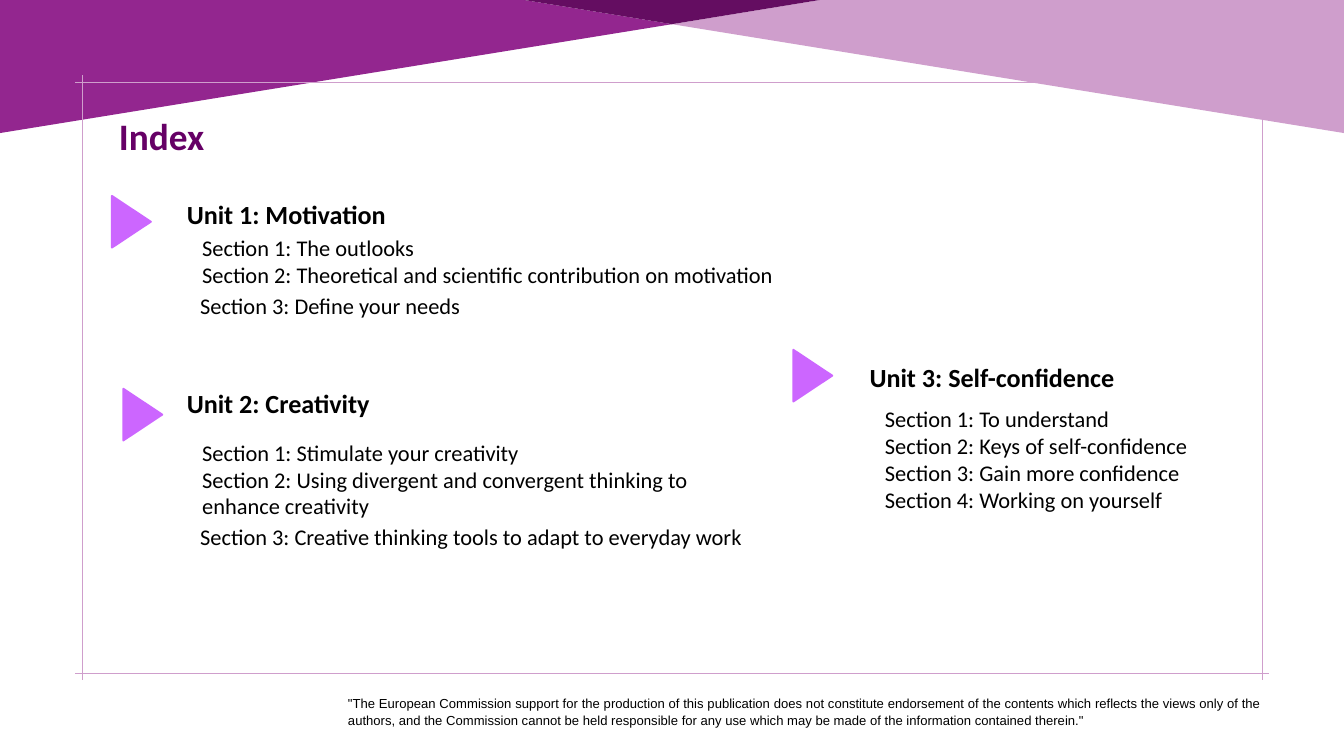
from dataclasses import dataclass

from lxml import etree
from pptx import Presentation
from pptx.dml.color import RGBColor
from pptx.enum.shapes import MSO_CONNECTOR, MSO_SHAPE
from pptx.enum.text import MSO_ANCHOR, MSO_AUTO_SIZE, PP_ALIGN
from pptx.oxml.ns import qn
from pptx.util import Emu, Pt

PX = 9144  # 100 px to the inch
TRIANGLE = MSO_SHAPE.ISOSCELES_TRIANGLE
STRAIGHT = MSO_CONNECTOR.STRAIGHT
TOP = MSO_ANCHOR.TOP
NO_AUTOFIT = MSO_AUTO_SIZE.NONE
LEFT, JUSTIFY = PP_ALIGN.LEFT, PP_ALIGN.JUSTIFY


@dataclass(frozen=True)
class Theme:
    purple: str = "93268F"
    lilac: str = "CF9ECC"
    plum: str = "640D61"
    title: str = "660066"
    marker: str = "CC66FF"
    text: str = "000000"
    font: str = "Calibri"
    note_font: str = "Arial"
    title_size: int = 40
    unit_size: int = 28
    section_size: int = 24
    note_size: int = 14


THEME = Theme()

# Content
TITLE = "Index"
DISCLAIMER = (
    '"The European Commission support for the production of this publication does not '
    "constitute endorsement of the contents which reflects the views only of the authors, "
    "and the Commission cannot be held responsible for any use which may be made of the "
    'information contained therein."'
)
# Boxes are (left, top, width, height); the last section may be set looser
UNITS = [
    {"name": "Unit 1: Motivation", "name_box": (266, 284, 956, 57), "name_spacing": 1.15,
     "sections": ["Section 1: The outlooks",
                  "Section 2: Theoretical and scientific contribution on motivation",
                  "Section 3: Define your needs"],
     "sections_box": (266, 344, 956, 131), "loose_end": True, "marker": (157, 301)},
    {"name": "Unit 2: Creativity", "name_box": (266, 572, 827, 57), "name_spacing": 1.0,
     "sections": ["Section 1: Stimulate your creativity",
                  "Section 2: Using divergent and convergent thinking to enhance creativity",
                  "Section 3: Creative thinking tools to adapt to everyday work"],
     "sections_box": (266, 648, 865, 172), "loose_end": True, "marker": (174, 588)},
    {"name": "Unit 3: Self-confidence", "name_box": (1282, 533, 560, 57), "name_spacing": 1.0,
     "sections": ["Section 1: To understand",
                  "Section 2: Keys of self-confidence",
                  "Section 3: Gain more confidence",
                  "Section 4: Working on yourself"],
     "sections_box": (1282, 598, 560, 172), "loose_end": False, "marker": (1171, 530)},
]

# Geometry
WIDTH, HEIGHT = 2000, 1125
MARKER_SIZE = (77, 58)
SECTION_INDENT, LOOSE_INDENT, LOOSE_SPACING = 25, 22, 1.15
BANDS = [
    (THEME.purple, [(0, 198), (0, 0), (780, 0), (1000, 36)]),
    (THEME.lilac, [(2000, 198), (1000, 36), (1220, 0), (2000, 0)]),
    (THEME.plum, [(1000, 36), (780, 0), (1220, 0)]),
]
FRAME_LEFT, FRAME_TOP, FRAME_RIGHT, FRAME_BOTTOM, OVERHANG = 122, 122, 1878, 1002, 10


def px(*lengths):
    return [Emu(length * PX) for length in lengths]


def color(value):
    return RGBColor.from_string(value)


def add_band(slide, fill, points):
    builder = slide.shapes.build_freeform(*points[0], scale=PX)
    builder.add_line_segments(points[1:], close=True)
    shape = builder.convert_to_shape()
    shape.shadow.inherit = False
    shape.fill.solid()
    shape.fill.fore_color.rgb = color(fill)
    shape.line.fill.background()


def add_rule(slide, *ends):
    rule = slide.shapes.add_connector(STRAIGHT, *px(*ends))
    rule.line.color.rgb = color(THEME.lilac)
    rule.line.width = Pt(0.75)
    etree.SubElement(rule._element.spPr, qn("a:effectLst"))


def add_frame(slide):
    for y in (FRAME_TOP, FRAME_BOTTOM):
        add_rule(slide, FRAME_LEFT - OVERHANG, y, FRAME_RIGHT + OVERHANG, y)
    for x in (FRAME_LEFT, FRAME_RIGHT):
        add_rule(slide, x, FRAME_TOP - OVERHANG, x, FRAME_BOTTOM + OVERHANG)


def add_marker(slide, left, top):
    marker = slide.shapes.add_shape(TRIANGLE, *px(left, top, *MARKER_SIZE))
    marker.rotation = 90
    marker.shadow.inherit = False
    marker.fill.solid()
    marker.fill.fore_color.rgb = color(THEME.marker)
    marker.line.color.rgb = color(THEME.marker)
    marker.line.width = Pt(2)


def style(paragraph, size, fill=THEME.text, bold=False, font=THEME.font, align=LEFT):
    paragraph.alignment = align
    paragraph.font.name = font
    paragraph.font.size = Pt(size)
    paragraph.font.bold = bold
    paragraph.font.color.rgb = color(fill)


def prepare(frame, side_inset=10):
    frame.word_wrap = True
    frame.auto_size = NO_AUTOFIT
    frame.vertical_anchor = TOP
    frame.margin_left, frame.margin_right = px(side_inset, side_inset)
    frame.margin_top, frame.margin_bottom = px(5, 5)


def add_text(slide, box, lines, side_inset=10, **look):
    frame = slide.shapes.add_textbox(*px(*box)).text_frame
    prepare(frame, side_inset)
    frame.text = "\n".join(lines)
    for paragraph in frame.paragraphs:
        style(paragraph, **look)
    return frame.paragraphs


def add_unit(slide, unit):
    heading = add_text(slide, unit["name_box"], [unit["name"]], side_inset=12,
                       size=THEME.unit_size, bold=True)
    heading[0].line_spacing = unit["name_spacing"]

    sections = add_text(slide, unit["sections_box"], unit["sections"],
                        size=THEME.section_size)
    for number, paragraph in enumerate(sections, start=1):
        loose = unit["loose_end"] and number == len(sections)
        indent = LOOSE_INDENT if loose else SECTION_INDENT
        paragraph._p.get_or_add_pPr().set("marL", str(indent * PX))
        if loose:
            paragraph.line_spacing = LOOSE_SPACING

    add_marker(slide, *unit["marker"])


def main():
    presentation = Presentation()
    presentation.slide_width, presentation.slide_height = px(WIDTH, HEIGHT)
    slide = presentation.slides.add_slide(presentation.slide_layouts[5])

    # Backdrop
    for fill, points in BANDS:
        add_band(slide, fill, points)
    add_frame(slide)

    # Title
    title = slide.shapes.title
    title.left, title.top, title.width, title.height = px(167, 164, 1035, 77)
    prepare(title.text_frame)
    title.text_frame.text = TITLE
    style(title.text_frame.paragraphs[0], THEME.title_size, THEME.title, bold=True)

    # Units
    for unit in UNITS:
        add_unit(slide, unit)

    # Disclaimer
    note = add_text(slide, (508, 1029, 1379, 52), [DISCLAIMER], size=THEME.note_size,
                    font=THEME.note_font, align=JUSTIFY)
    note[0].line_spacing = 1.07

    presentation.save("out.pptx")


if __name__ == "__main__":
    main()
